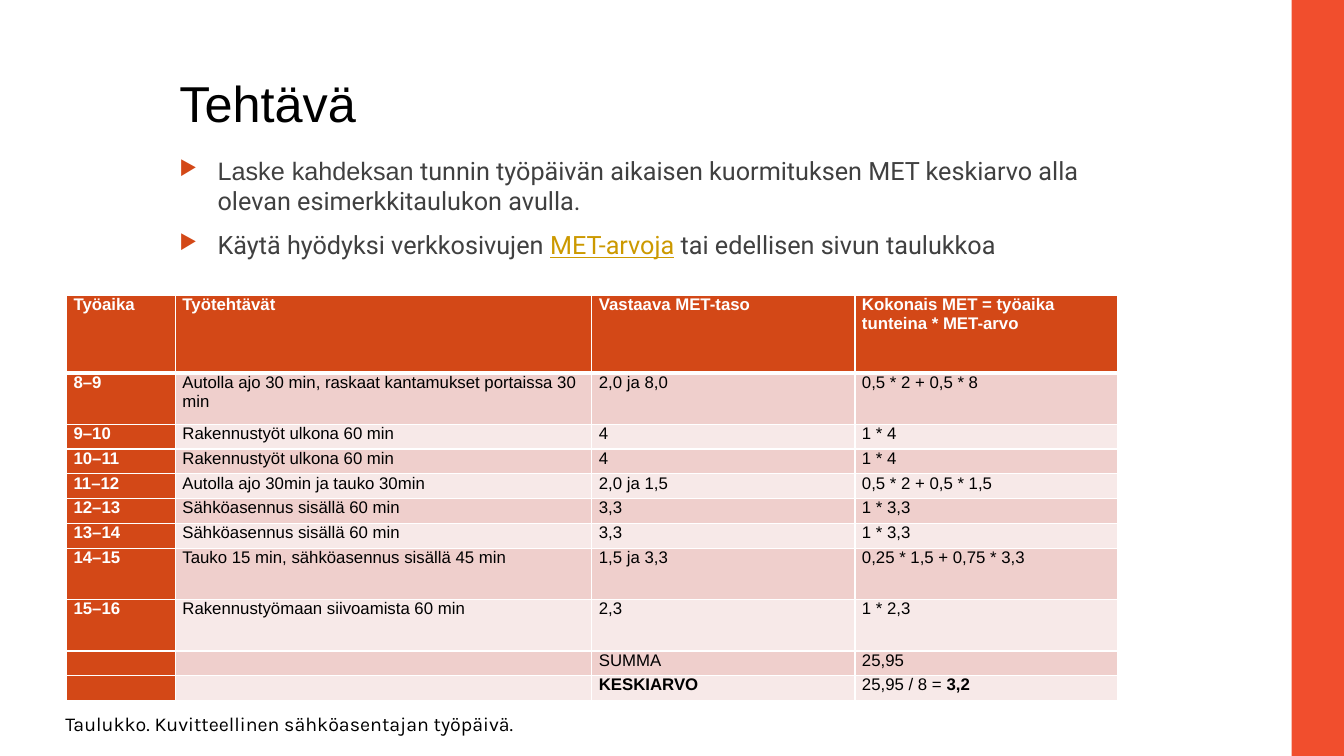
from lxml import etree
from pptx import Presentation
from pptx.dml.color import RGBColor
from pptx.enum import shapes, text
from pptx.oxml import ns
from pptx.util import Inches, Pt

TITLE = "Tehtävä"
BULLETS = [
    [("Laske kahdeksan", "Arial", "404040", False),
     (" tunnin työpäivän aikaisen kuormituksen MET keskiarvo alla olevan "
      "esimerkkitaulukon avulla.", "Roboto", "404040", False)],
    [("Käytä hyödyksi verkkosivujen ", "Roboto", "404040", False),
     ("MET-arvoja", "Roboto", "CC9900", True),
     (" tai edellisen sivun taulukkoa", "Roboto", "404040", False)],
]
ROWS = [
    ("Työaika", "Työtehtävät", "Vastaava MET-taso", "Kokonais MET = työaika tunteina * MET-arvo"),
    ("8–9", "Autolla ajo 30 min, raskaat kantamukset portaissa 30 min", "2,0 ja 8,0", "0,5 * 2 + 0,5 * 8"),
    ("9–10", "Rakennustyöt ulkona 60 min", "4", "1 * 4"),
    ("10–11", "Rakennustyöt ulkona 60 min", "4", "1 * 4"),
    ("11–12", "Autolla ajo 30min ja tauko 30min", "2,0 ja 1,5", "0,5 * 2 + 0,5 * 1,5"),
    ("12–13", "Sähköasennus sisällä 60 min", "3,3", "1 * 3,3"),
    ("13–14", "Sähköasennus sisällä 60 min", "3,3", "1 * 3,3"),
    ("14–15", "Tauko 15 min, sähköasennus sisällä 45 min", "1,5 ja 3,3", "0,25 * 1,5 + 0,75 * 3,3"),
    ("15–16", "Rakennustyömaan siivoamista 60 min", "2,3", "1 * 2,3"),
    ("", "", "SUMMA", "25,95"),
    ("", "", "KESKIARVO", "25,95 / 8 = "),
]
AVERAGE = "3,2"
CAPTION = "Taulukko. Kuvitteellinen sähköasentajan työpäivä."

SLIDE_W, SLIDE_H = 13.33, 7.5
BAR_LEFT = 12.81
COLUMNS = [1.08, 4.13, 2.61, 2.61]
TABLE_H, HEADER_H, TALL_H = 4.02, 0.77, 0.51
TALL_ROWS = {1, 7, 8}
ACCENT, BANDS = "D34817", ("F7E9E8", "EFCFCC")


def color(value):
    return RGBColor.from_string(value)


def style(span, font, size, value, bold=False, underline=False):
    span.font.name = font
    span.font.size = Pt(size)
    span.font.color.rgb = color(value)
    span.font.bold = bold
    span.font.underline = underline


def add_child(parent, tag, **attributes):
    return etree.SubElement(parent, ns.qn(tag), **attributes)


def set_bullet(para):
    props = para._p.get_or_add_pPr()
    props.set("marL", str(Inches(0.38)))
    props.set("indent", str(-Inches(0.38)))
    add_child(add_child(props, "a:buClr"), "a:srgbClr", val=ACCENT)
    add_child(props, "a:buSzPct", val="80000")
    add_child(props, "a:buChar", char="▶")


def set_borders(cell, row):
    props = cell._tc.get_or_add_tcPr()
    widths = {"L": 1, "R": 1, "T": 3 if row == 1 else 1, "B": 3 if row == 0 else 1}
    for side, width in widths.items():
        line = add_child(props, f"a:ln{side}", w=str(Pt(width)))
        add_child(add_child(line, "a:solidFill"), "a:srgbClr", val="FFFFFF")


def fill_cell(cell, row, column):
    heading = row == 0 or column == 0
    set_borders(cell, row)
    cell.fill.solid()
    cell.fill.fore_color.rgb = color(ACCENT if heading else BANDS[row % 2])
    cell.margin_left = cell.margin_right = Inches(0.07)
    cell.margin_top = cell.margin_bottom = 0
    para = cell.text_frame.paragraphs[0]
    para.text = ROWS[row][column]
    if not para.text:
        add_child(para._p, "a:endParaRPr", sz="1200")
    for span in para.runs:
        style(span, "Arial", 12, "FFFFFF" if heading else "000000",
              heading or span.text == "KESKIARVO")


def add_title(page):
    title = page.shapes.title
    title.left, title.top = Inches(1.68), Inches(0.67)
    title.width, title.height = Inches(9.75), Inches(1.44)
    title.text_frame.text = TITLE
    title.text_frame.vertical_anchor = text.MSO_ANCHOR.TOP
    para = title.text_frame.paragraphs[0]
    para.alignment = text.PP_ALIGN.LEFT
    style(para.runs[0], "Arial", 36, "000000")


def add_bullets(page):
    box = page.shapes.add_textbox(Inches(1.68), Inches(1.49), Inches(9.75), Inches(4.24))
    frame = box.text_frame
    frame.word_wrap = True
    for number, parts in enumerate(BULLETS):
        para = frame.add_paragraph() if number else frame.paragraphs[0]
        set_bullet(para)
        if number:
            para.space_before = Pt(10)
        for words, font, value, underline in parts:
            span = para.add_run()
            span.text = words
            style(span, font, 18, value, underline=underline)


def add_schedule(page):
    table = page.shapes.add_table(
        len(ROWS), len(COLUMNS), Inches(0.66), Inches(2.93),
        Inches(sum(COLUMNS)), Inches(TABLE_H)).table
    table.first_col = True
    for column, width in zip(table.columns, COLUMNS):
        column.width = Inches(width)
    short_count = len(ROWS) - 1 - len(TALL_ROWS)
    short_h = (TABLE_H - HEADER_H - TALL_H * len(TALL_ROWS)) / short_count
    for row in range(len(ROWS)):
        height = HEADER_H if row == 0 else TALL_H if row in TALL_ROWS else short_h
        table.rows[row].height = Inches(height)
        for column in range(len(COLUMNS)):
            fill_cell(table.cell(row, column), row, column)
    last = table.cell(len(ROWS) - 1, len(COLUMNS) - 1)
    span = last.text_frame.paragraphs[0].add_run()
    span.text = AVERAGE
    style(span, "Arial", 12, "000000", bold=True)


def add_caption(page):
    box = page.shapes.add_textbox(Inches(0.55), Inches(7.01), Inches(4.75), Inches(0.34))
    box.text_frame.text = CAPTION
    box.text_frame.word_wrap = False
    box.text_frame.auto_size = text.MSO_AUTO_SIZE.SHAPE_TO_FIT_TEXT
    style(box.text_frame.paragraphs[0].runs[0], "Karla", 14, "000000")


def add_bar(page):
    bar = page.shapes.add_shape(
        shapes.MSO_SHAPE.RECTANGLE, Inches(BAR_LEFT), 0,
        Inches(SLIDE_W - BAR_LEFT), Inches(SLIDE_H))
    bar.shadow.inherit = False
    bar.fill.solid()
    bar.fill.fore_color.rgb = color("F14E2D")
    bar.line.fill.background()


def main():
    deck = Presentation()
    deck.slide_width, deck.slide_height = Inches(SLIDE_W), Inches(SLIDE_H)
    page = deck.slides.add_slide(deck.slide_layouts[5])
    add_bar(page)
    add_title(page)
    add_bullets(page)
    add_schedule(page)
    add_caption(page)
    deck.save("out.pptx")


if __name__ == "__main__":
    main()
